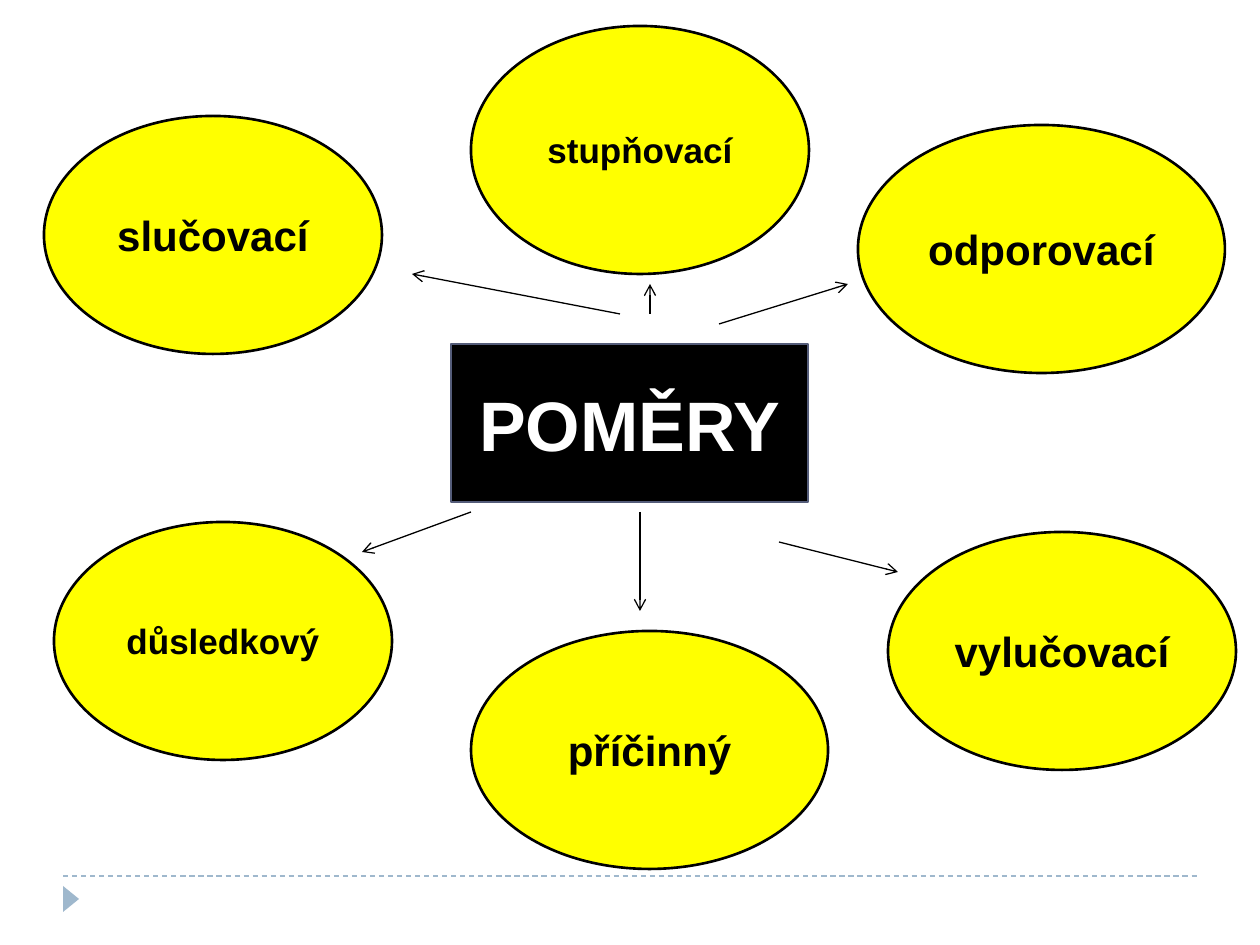
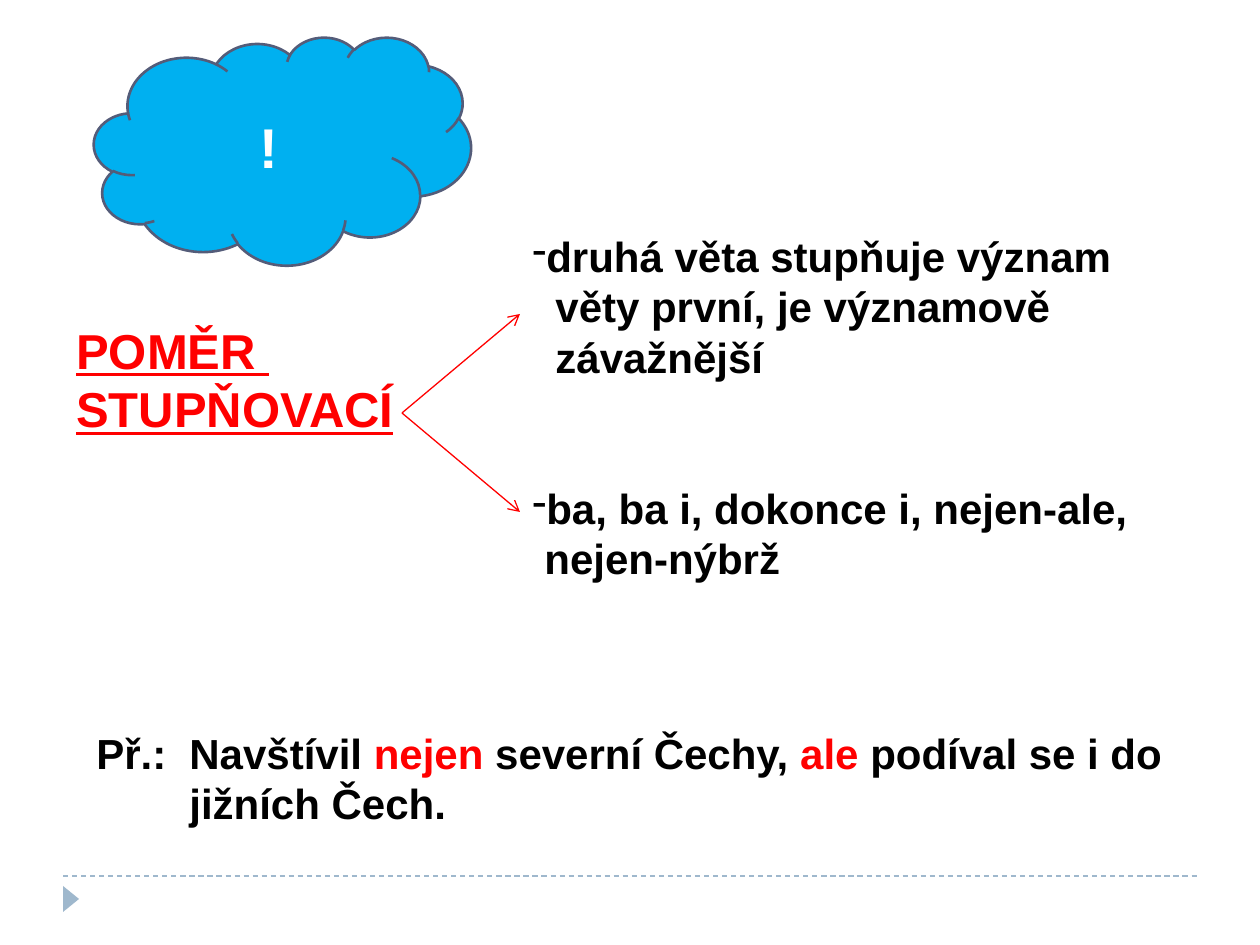
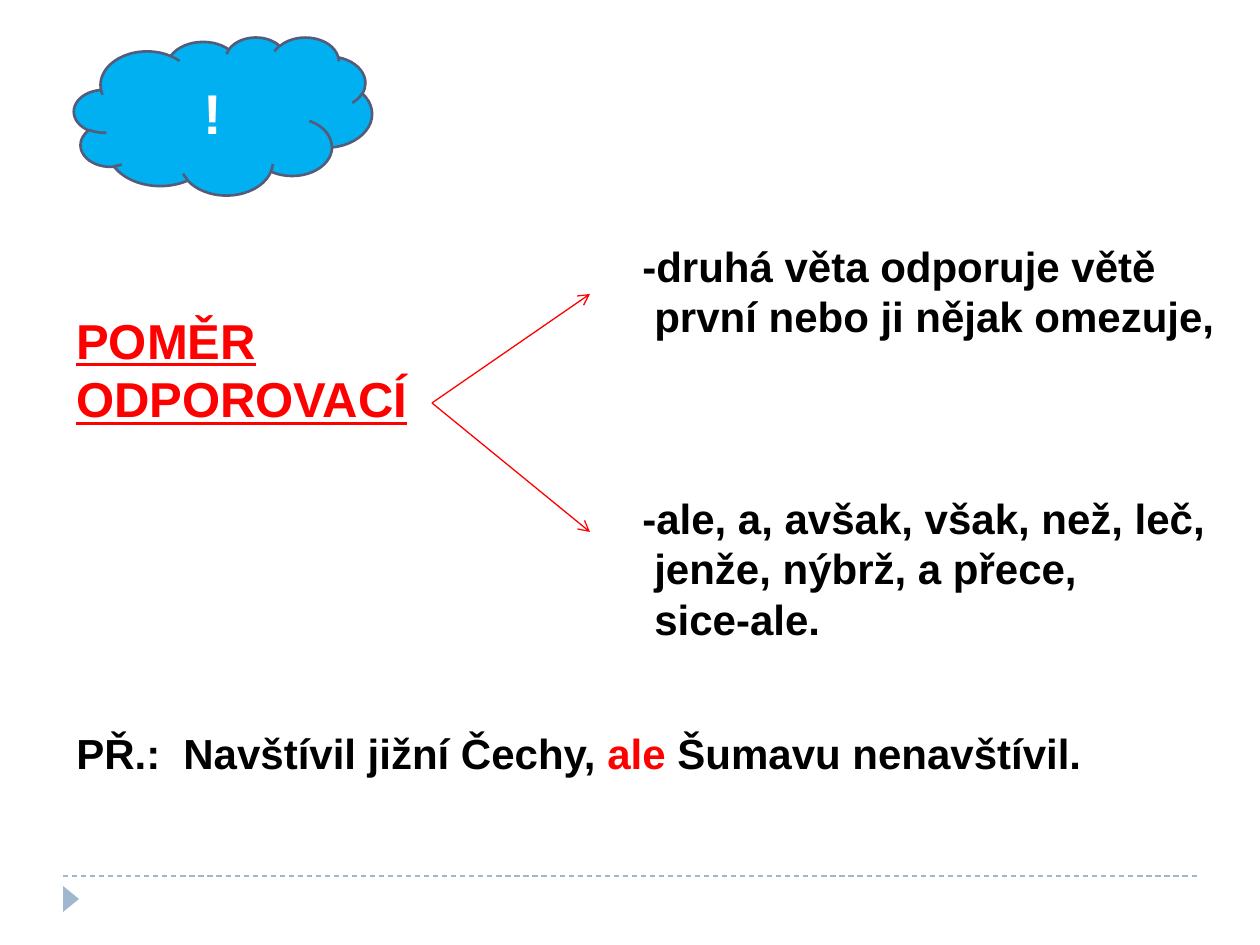
from lxml.etree import SubElement
from pptx import Presentation
from pptx.dml.color import RGBColor
from pptx.enum.dml import MSO_LINE
from pptx.enum.shapes import MSO_CONNECTOR, MSO_SHAPE
from pptx.enum.text import MSO_ANCHOR, MSO_AUTO_SIZE, PP_ALIGN
from pptx.oxml.ns import qn
from pptx.util import Pt

PX = 914400 / 126
FONT = "Arial"
LINE_HEIGHT = 1.2
BODY_SIZE, HEADING_SIZE = 24, 28

BLACK = RGBColor(0x00, 0x00, 0x00)
WHITE = RGBColor(0xFF, 0xFF, 0xFF)
RED = RGBColor(0xFF, 0x00, 0x00)
YELLOW = RGBColor(0xFF, 0xFF, 0x00)
SKY = RGBColor(0x00, 0xB0, 0xF0)
SLATE = RGBColor(0x54, 0x5C, 0x79)
FOOTER_BLUE = RGBColor(0x9F, 0xB8, 0xCD)

# Overview: centre, (label, size, box) of each relation, (start, end) of each arrow
CENTRE = ("POMĚRY", 40, (451, 344, 357, 158))
RELATIONS = [
    ("slučovací", 24, (44, 116, 338, 238)),
    ("stupňovací", 20, (471, 26, 338, 248)),
    ("odporovací", 24, (858, 125, 367, 248)),
    ("důsledkový", 20, (54, 522, 338, 238)),
    ("příčinný", 24, (471, 631, 357, 238)),
    ("vylučovací", 24, (888, 532, 348, 238)),
]
ARROWS = [
    ((620, 314), (412, 274)),
    ((650, 314), (650, 284)),
    ((719, 324), (848, 284)),
    ((471, 512), (362, 552)),
    ((640, 512), (640, 611)),
    ((779, 542), (898, 572)),
]

# Detail pages. A line is (text, options); text between bars is red.
# Options: left = indent, hang = hanging indent, blank = lines skipped before
DETAILS = [
    dict(
        cloud=(94, 37, 377, 228),
        heading=((64, 314, 346, 131), ["POMĚR ", "STUPŇOVACÍ"]),
        points=((520, 224, 625, 420), [
            ("druhá věta stupňuje význam", dict(bullet="-")),
            ("věty první, je významově", dict(left=23)),
            ("závažnější", dict(left=23)),
            ("ba, ba i, dokonce i, nejen-ale,", dict(bullet="-", blank=2)),
            ("nejen-nýbrž", dict(left=12)),
        ]),
        example=((84, 721, 1101, 115), [
            ("Př.:\tNavštívil |nejen| severní Čechy, |ale| podíval se i do",
             dict(left=93, hang=93)),
            ("jižních Čech.", dict(left=93)),
        ]),
        fork=((402, 413), [(520, 314), (520, 512)]),
    ),
    dict(
        cloud=(74, 37, 298, 158),
        heading=((64, 304, 359, 131), ["POMĚR", "ODPOROVACÍ"]),
        points=((630, 234, 602, 420), [
            ("-druhá věta odporuje větě", {}),
            ("první nebo ji nějak omezuje,", dict(left=12)),
            ("-ale, a, avšak, však, než, leč,", dict(blank=3)),
            ("jenže, nýbrž, a přece,", dict(left=12)),
            ("sice-ale.", dict(left=12)),
        ]),
        example=((64, 721, 1040, 63), [
            ("PŘ.:\tNavštívil jižní Čechy, |ale| Šumavu nenavštívil.",
             dict(left=107, hang=107)),
        ]),
        fork=((432, 403), [(590, 294), (590, 532)]),
    ),
]


def px(*lengths):
    return [round(length * PX) for length in lengths]


def style(font, size, color):
    font.name, font.size, font.bold = FONT, Pt(size), True
    font.color.rgb = color


def add_figure(page, kind, box, fill, outline=None):
    figure = page.shapes.add_shape(kind, *px(*box))
    figure.shadow.inherit = False
    figure.fill.solid()
    figure.fill.fore_color.rgb = fill
    if outline is None:
        figure.line.fill.background()
    else:
        figure.line.color.rgb = outline
        figure.line.width = Pt(1.5)
    return figure


def add_label(figure, text, size, color):
    figure.text_frame.vertical_anchor = MSO_ANCHOR.MIDDLE
    para = figure.text_frame.paragraphs[0]
    para.text = text
    para.alignment = PP_ALIGN.CENTER
    style(para.font, size, color)


def add_line(page, start, end, color):
    line = page.shapes.add_connector(MSO_CONNECTOR.STRAIGHT, *px(*start, *end))
    line.line.color.rgb = color
    line.line.width = Pt(0.75)
    SubElement(line._element.spPr, qn("a:effectLst"))
    return line


def add_arrow(page, start, end, color):
    line_xml = add_line(page, start, end, color).line._get_or_add_ln()
    SubElement(line_xml, qn("a:tailEnd"), type="arrow")


def add_text(page, box, lines, size, color):
    frame = page.shapes.add_textbox(*px(*box)).text_frame
    frame.word_wrap = False
    frame.auto_size = MSO_AUTO_SIZE.SHAPE_TO_FIT_TEXT
    for index, (text, options) in enumerate(lines):
        para = frame.add_paragraph() if index else frame.paragraphs[0]
        style(para.font, size, color)
        para.line_spacing = Pt(size * LINE_HEIGHT)
        para.space_before = Pt(options.get("blank", 0) * size * LINE_HEIGHT)
        left, hang = px(options.get("left", 0), options.get("hang", 0))
        properties = para._p.get_or_add_pPr()
        properties.set("marL", str(left))
        properties.set("indent", str(-hang))
        if "bullet" in options:
            SubElement(properties, qn("a:buFontTx"))
            SubElement(properties, qn("a:buChar"), char=options["bullet"])
            # The default run style has to follow the bullet
            properties.append(properties.find(qn("a:defRPr")))
        for position, piece in enumerate(text.split("|")):
            span = para.add_run()
            span.text = piece
            style(span.font, size, RED if position % 2 else color)
    return frame


def add_page(deck):
    page = deck.slides.add_slide(deck.slide_layouts[6])
    # Footer rule and marker
    add_line(page, (63, 876), (1197, 876), FOOTER_BLUE).line.dash_style = MSO_LINE.DASH
    marker = add_figure(page, MSO_SHAPE.ISOSCELES_TRIANGLE, (58, 891, 26, 16), FOOTER_BLUE)
    marker.rotation = 90
    return page


def add_overview(deck):
    page = add_page(deck)
    text, size, box = CENTRE
    add_label(add_figure(page, MSO_SHAPE.RECTANGLE, box, BLACK, SLATE), text, size, WHITE)
    for text, size, box in RELATIONS:
        add_label(add_figure(page, MSO_SHAPE.OVAL, box, YELLOW, BLACK), text, size, BLACK)
    for start, end in ARROWS:
        add_arrow(page, start, end, BLACK)


def add_detail(deck, detail):
    page = add_page(deck)
    add_text(page, *detail["points"], BODY_SIZE, BLACK)
    box, words = detail["heading"]
    heading = add_text(page, box, [(word, {}) for word in words], HEADING_SIZE, RED)
    for para in heading.paragraphs:
        para.runs[0].font.underline = True
    add_text(page, *detail["example"], BODY_SIZE, BLACK)
    start, ends = detail["fork"]
    for end in ends:
        add_arrow(page, start, end, RED)
    add_label(add_figure(page, MSO_SHAPE.CLOUD, detail["cloud"], SKY, SLATE), "!", 32, WHITE)


def main():
    deck = Presentation()
    deck.slide_width, deck.slide_height = px(1260, 945)
    add_overview(deck)
    for detail in DETAILS:
        add_detail(deck, detail)
    deck.save("out.pptx")


if __name__ == "__main__":
    main()
